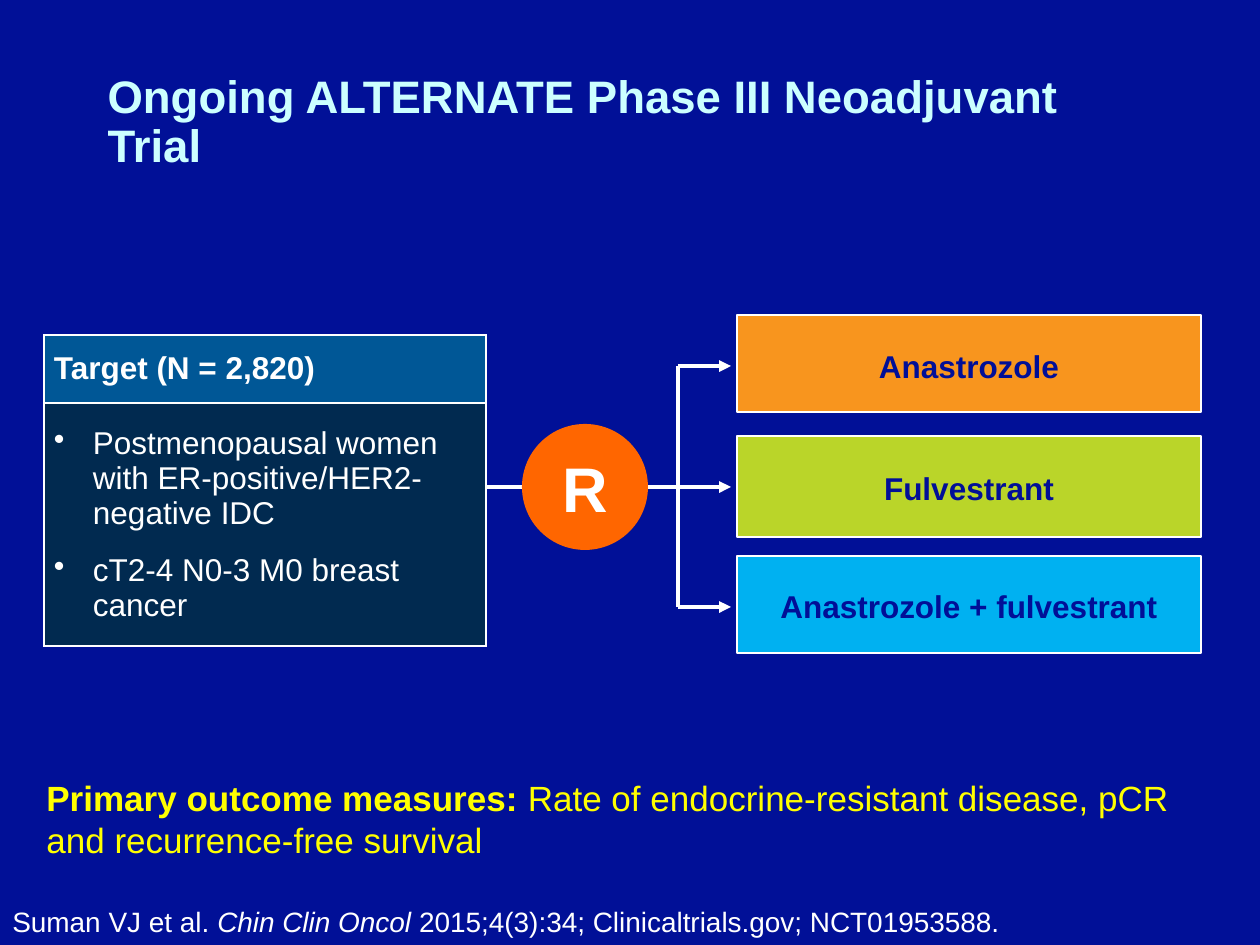
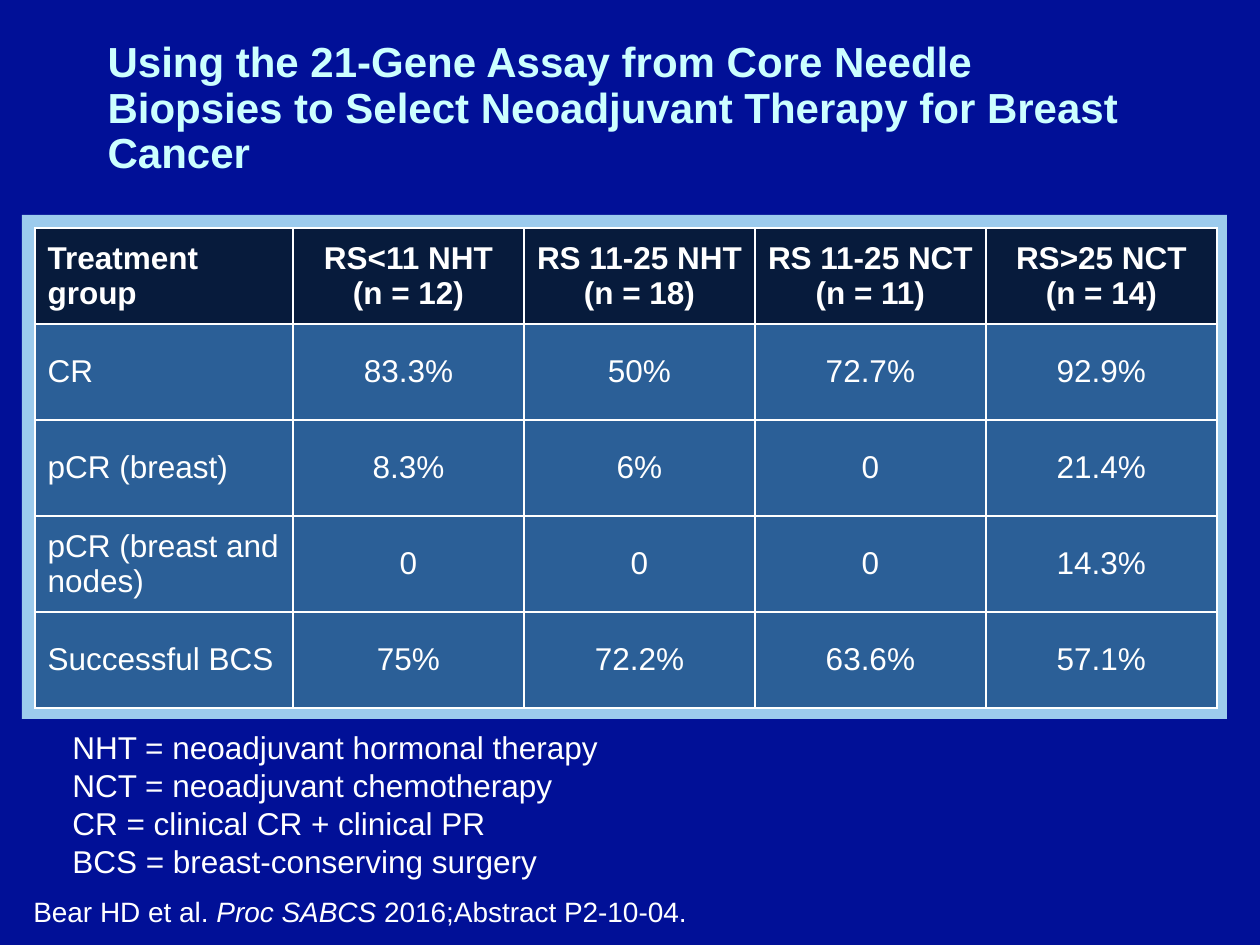
import dataclasses

import lxml.etree
import pptx
import pptx.dml.color
import pptx.enum.shapes
import pptx.enum.text
import pptx.oxml.ns
import pptx.util

SHAPES = pptx.enum.shapes.MSO_SHAPE
ALIGN = pptx.enum.text.PP_ALIGN
MIDDLE = pptx.enum.text.MSO_ANCHOR.MIDDLE
TOP = pptx.enum.text.MSO_ANCHOR.TOP


@dataclasses.dataclass(frozen=True)
class Theme:
    font: str = "Arial"
    background: str = "011097"
    title: str = "CCFFFF"
    white: str = "FFFFFF"
    outcome: str = "FFFF00"
    arm_text: str = "010F97"
    randomize: str = "FF6600"
    target_head: str = "005796"
    target_body: str = "012A50"
    frame: str = "9CCBED"
    results_head: str = "071B3C"
    results_body: str = "2B5F97"
    body_size: int = 18
    source_size: int = 16
    outcome_size: int = 20
    randomize_size: int = 36
    flow_line: float = 2.25
    thin_line: float = 0.75
    cell_line: int = 1


THEME = Theme()

# Content: a rich paragraph is a list of (text, style), style "b", "i" or ""
TRIAL = {
    "title": "Ongoing ALTERNATE Phase III Neoadjuvant Trial",
    "target": "Target (N = 2,820)",
    "criteria": ["Postmenopausal women with ER-positive/HER2-negative IDC",
                 "cT2-4 N0-3 M0 breast cancer"],
    "randomize": "R",
    # name, fill, top, height
    "arms": [("Anastrozole", "F8951E", 315, 97),
             ("Fulvestrant", "BAD529", 436, 101),
             ("Anastrozole + fulvestrant", "00B1F1", 556, 97)],
    "outcome": [("Primary outcome measures: ", "b"),
                ("Rate of endocrine-resistant disease, pCR and recurrence-free survival", "")],
    "source": [("Suman VJ et al. ", ""), ("Chin Clin Oncol ", "i"),
               ("2015;4(3):34; Clinicaltrials.gov; NCT01953588.", "")],
}
ASSAY = {
    "title": "Using the 21-Gene Assay from Core Needle Biopsies to Select "
             "Neoadjuvant Therapy for Breast Cancer",
    "results": [
        ("Treatment group", "RS<11 NHT\n(n = 12)", "RS 11-25 NHT (n = 18)",
         "RS 11-25 NCT (n = 11)", "RS>25 NCT (n = 14)"),
        ("CR", "83.3%", "50%", "72.7%", "92.9%"),
        ("pCR (breast)", "8.3%", "6%", "0", "21.4%"),
        ("pCR (breast and nodes)", "0", "0", "0", "14.3%"),
        ("Successful BCS", "75%", "72.2%", "63.6%", "57.1%"),
    ],
    "abbreviations": ["NHT = neoadjuvant hormonal therapy",
                      "NCT = neoadjuvant chemotherapy",
                      "CR = clinical CR + clinical PR",
                      "BCS = breast-conserving surgery"],
    "source": [("Bear HD et al. ", ""), ("Proc SABCS ", "i"),
               ("2016;Abstract P2-10-04.", "")],
}


# Shared helpers
def px(*lengths):
    return [round(length * 914400 / 126) for length in lengths]


def rgb(colour):
    return pptx.dml.color.RGBColor.from_string(colour)


def add_xml(parent, tag, **attributes):
    return lxml.etree.SubElement(parent, pptx.oxml.ns.qn(tag), attributes)


def paint(shape, fill, line=None):
    shape.shadow.inherit = False
    shape.fill.solid()
    shape.fill.fore_color.rgb = rgb(fill)
    if line:
        shape.line.color.rgb = rgb(line)
        shape.line.width = pptx.util.Pt(THEME.thin_line)
    else:
        shape.line.fill.background()


def write(frame, paragraphs, size, colour=THEME.white, bold=False, align=ALIGN.LEFT,
          spacing=None, gap=None, bullet=False):
    """Fill a text frame with plain strings or lists of (text, style) runs."""
    for index, content in enumerate(paragraphs):
        paragraph = frame.paragraphs[0] if index == 0 else frame.add_paragraph()
        if isinstance(content, str):
            paragraph.text = content
        else:
            for text, style in content:
                run = paragraph.add_run()
                run.text = text
                if style == "b":
                    run.font.bold = True
                if style == "i":
                    run.font.italic = True
        paragraph.alignment = align
        if spacing:
            paragraph.line_spacing = spacing
        if gap:
            paragraph.space_before = paragraph.space_after = pptx.util.Pt(gap)
        if bullet:
            properties = paragraph._p.get_or_add_pPr()
            indent = px(39)[0]
            properties.set("marL", str(indent))
            properties.set("indent", str(-indent))
            add_xml(properties, "a:buChar", char="•")
        font = paragraph.font
        font.name, font.size, font.bold = THEME.font, pptx.util.Pt(size), bold
        font.color.rgb = rgb(colour)


def add_slide(deck, title, top, size):
    slide = deck.slides.add_slide(deck.slide_layouts[5])
    heading = slide.shapes.title
    heading.left, heading.top, heading.width, heading.height = px(95, top, 1071, 157)
    heading.text_frame.auto_size = pptx.enum.text.MSO_AUTO_SIZE.NONE
    heading.text_frame.vertical_anchor = MIDDLE
    write(heading.text_frame, [title], size, THEME.title, bold=True, spacing=0.9)
    return slide


def add_text(slide, box, paragraphs, size, colour=THEME.white):
    frame = slide.shapes.add_textbox(*px(*box)).text_frame
    frame.word_wrap = True
    frame.vertical_anchor = TOP
    write(frame, paragraphs, size, colour)


def add_block(slide, kind, box, text, fill, line=None, **style):
    block = slide.shapes.add_shape(kind, *px(*box))
    paint(block, fill, line)
    block.text_frame.vertical_anchor = MIDDLE
    write(block.text_frame, [text], bold=True, align=ALIGN.CENTER, **style)


def add_flow(slide, start, end, arrow=False):
    flow = slide.shapes.add_connector(pptx.enum.shapes.MSO_CONNECTOR.STRAIGHT,
                                      *px(*start, *end))
    flow.line.color.rgb = rgb(THEME.white)
    flow.line.width = pptx.util.Pt(THEME.flow_line)
    if arrow:
        add_xml(flow.line._get_or_add_ln(), "a:tailEnd", type="triangle")
    add_xml(flow._element.spPr, "a:effectLst")


def add_grid(slide, left, top, widths, heights):
    box = px(left, top, sum(widths), sum(heights))
    grid = slide.shapes.add_table(len(heights), len(widths), *box).table
    grid.horz_banding = False
    for column, width in zip(grid.columns, px(*widths)):
        column.width = width
    for row, height in zip(grid.rows, px(*heights)):
        row.height = height
    return grid


def format_cell(cell, fill):
    properties = cell._tc.get_or_add_tcPr()
    for side in "LRTB":
        border = add_xml(properties, f"a:ln{side}", w=str(pptx.util.Pt(THEME.cell_line)))
        add_xml(add_xml(border, "a:solidFill"), "a:srgbClr", val=THEME.white)
    cell.fill.solid()
    cell.fill.fore_color.rgb = rgb(fill)
    cell.vertical_anchor = MIDDLE


# Slide 1: trial design
def build_trial(deck):
    slide = add_slide(deck, TRIAL["title"], top=45, size=26)
    add_text(slide, (0, 898, 1232, 47), [TRIAL["source"]], THEME.source_size)

    # Flow from target to arms
    middle, branch_x, tip_x, arm_x = 487, 678, 731, 737
    lanes = [middle + offset for offset in (-121, 0, 120)]
    add_flow(slide, (476, middle), (branch_x, middle))
    add_flow(slide, (branch_x, lanes[0]), (branch_x, lanes[-1]))
    for lane, (arm, fill, top, height) in zip(lanes, TRIAL["arms"]):
        add_flow(slide, (branch_x, lane), (tip_x, lane), arrow=True)
        add_block(slide, SHAPES.RECTANGLE, (arm_x, top, 464, height), arm, fill, THEME.white,
                  size=THEME.body_size, colour=THEME.arm_text, spacing=1.1)
    add_block(slide, SHAPES.OVAL, (522, middle - 63, 126, 126), TRIAL["randomize"],
              THEME.randomize, size=THEME.randomize_size)

    add_text(slide, (34, 770, 1166, 97), [TRIAL["outcome"]], THEME.outcome_size,
             THEME.outcome)

    # Target population
    target = add_grid(slide, 44, 335, [442], [68, 243])
    head, body = target.cell(0, 0), target.cell(1, 0)
    for cell, fill in ((head, THEME.target_head), (body, THEME.target_body)):
        format_cell(cell, fill)
        cell.margin_left = cell.margin_right = px(10)[0]
        cell.margin_top = cell.margin_bottom = px(5)[0]
    write(head.text_frame, [TRIAL["target"]], THEME.body_size, bold=True)
    write(body.text_frame, TRIAL["criteria"], THEME.body_size, gap=6, bullet=True)


# Slide 2: assay results
def build_assay(deck):
    slide = add_slide(deck, ASSAY["title"], top=31, size=24)
    frame = slide.shapes.add_shape(SHAPES.RECTANGLE, *px(22, 215, 1205, 504))
    paint(frame, THEME.frame)

    rows = ASSAY["results"]
    results = add_grid(slide, 35, 228, [258] + [231] * 4, [96] * len(rows))
    for r, row in enumerate(rows):
        for c, value in enumerate(row):
            cell = results.cell(r, c)
            format_cell(cell, THEME.results_body if r else THEME.results_head)
            write(cell.text_frame, [value], THEME.body_size, bold=r == 0, gap=6,
                  align=ALIGN.CENTER if c else ALIGN.LEFT)

    add_text(slide, (21, 888, 693, 47), [ASSAY["source"]], THEME.source_size)
    add_text(slide, (60, 722, 556, 165), ASSAY["abbreviations"], THEME.body_size)


def main():
    deck = pptx.Presentation()
    deck.slide_width, deck.slide_height = px(1260, 945)
    backdrop = deck.slide_master.background.fill
    backdrop.solid()
    backdrop.fore_color.rgb = rgb(THEME.background)
    build_trial(deck)
    build_assay(deck)
    deck.save("out.pptx")


if __name__ == "__main__":
    main()
